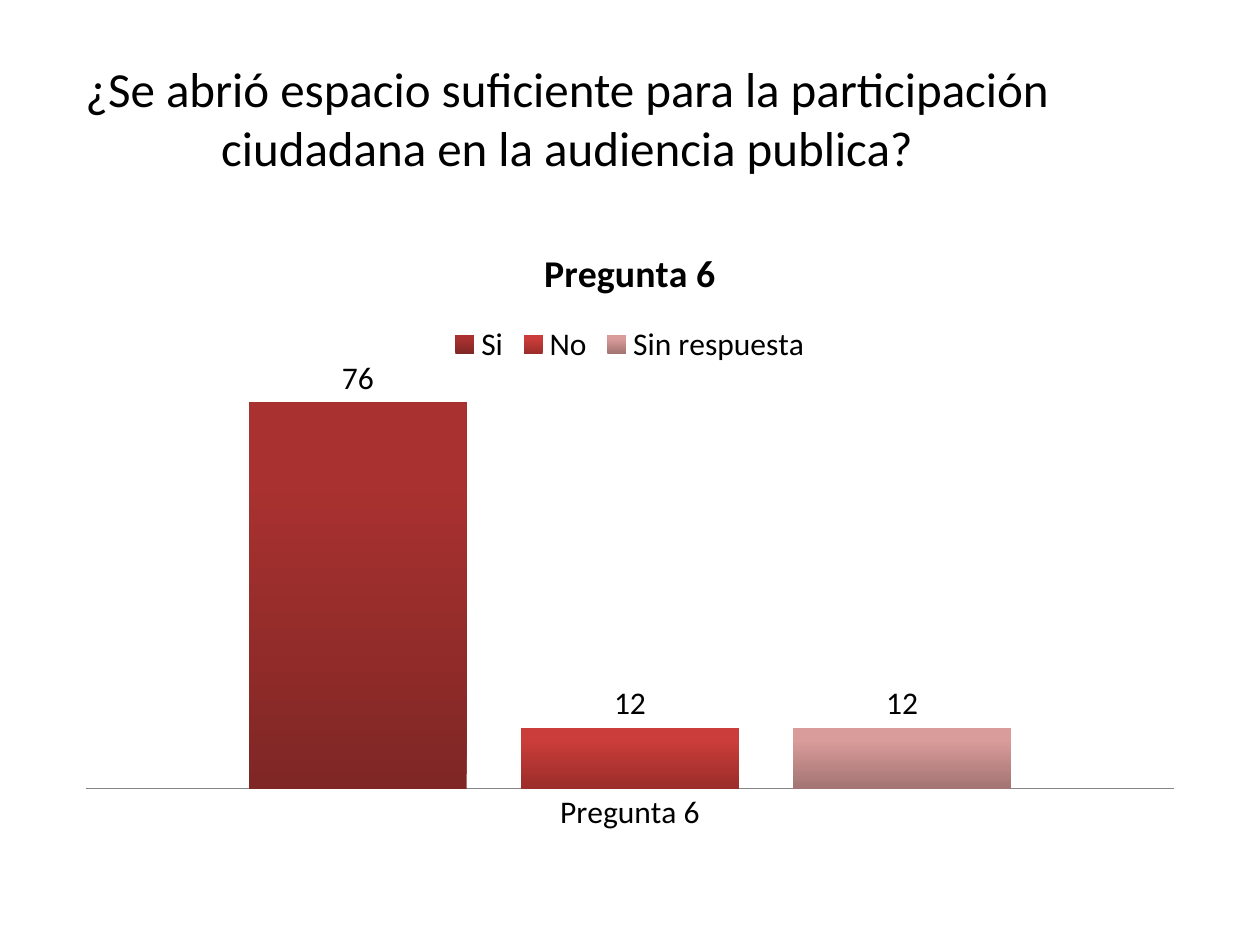
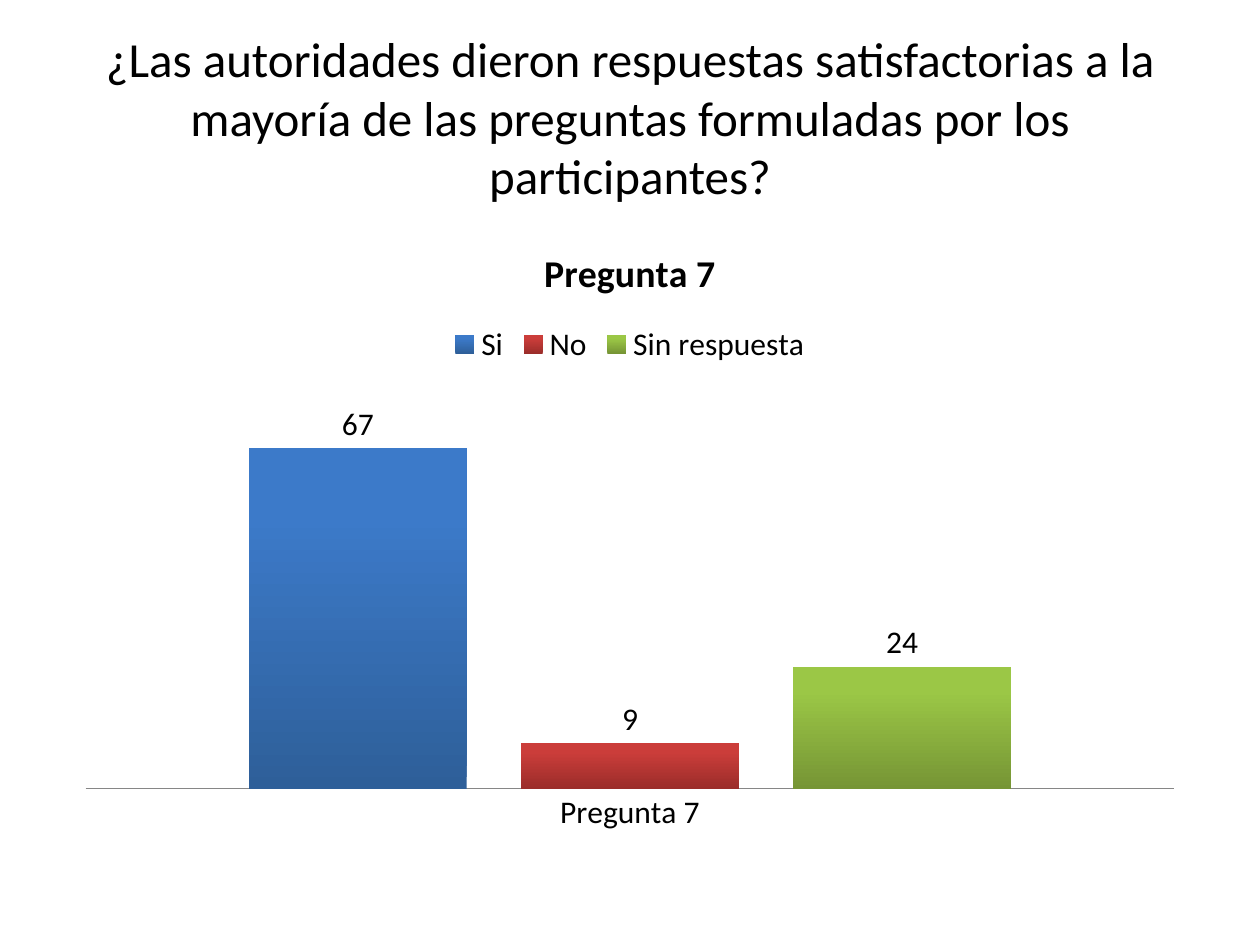
from pptx import Presentation
from pptx.chart.data import CategoryChartData
from pptx.dml.color import RGBColor
from pptx.enum.chart import (XL_CHART_TYPE, XL_LABEL_POSITION,
                             XL_LEGEND_POSITION, XL_TICK_MARK)
from pptx.enum.text import MSO_ANCHOR, PP_ALIGN
from pptx.util import Inches, Pt

FONT = "Calibri"
INK = "000000"
AXIS = "868686"
ANSWERS = ("Si", "No", "Sin respuesta")
TITLE_SIZE = (9, 1.25)
CHART_BOX = (0.5, 1.75, 9, 4.95)

# Each bar shades from its foot to its top.
RED = ("9B2D2A", "CB3D3A")
REDS = (("7F2725", "A93130"), RED, ("A37473", "D99C9B"))
MIXED = (("2E5F99", "3C7AC9"), RED, ("769535", "9BC746"))

POLLS = (
    ("¿Se abrió espacio suficiente para la participación ciudadana "
     "en la audiencia publica?", (0, 0.31), "Pregunta 6", (76, 12, 12), REDS),
    ("¿Las autoridades dieron respuestas satisfactorias a la mayoría de las "
     "preguntas formuladas por los participantes?",
     (0.5, 0.3), "Pregunta 7", (67, 9, 24), MIXED),
)


def color(code):
    return RGBColor.from_string(code)


def style(font, size, bold=False):
    font.name = FONT
    font.size = Pt(size)
    font.bold = bold
    font.color.rgb = color(INK)


def add_title(slide, text, box):
    title = slide.shapes.title
    title.left, title.top, title.width, title.height = map(Inches, box)
    frame = title.text_frame
    frame.text = text
    frame.word_wrap = True
    frame.vertical_anchor = MSO_ANCHOR.MIDDLE
    para = frame.paragraphs[0]
    para.alignment = PP_ALIGN.CENTER
    style(para.runs[0].font, 28)


def shade(fill, foot, top):
    fill.gradient()
    fill.gradient_angle = 90
    for stop, code, place in zip(fill.gradient_stops, (foot, top), (0, 0.8)):
        stop.color.rgb = color(code)
        stop.position = place


def add_bars(slide, name, votes, shades, box):
    data = CategoryChartData()
    data.categories = [name]
    for answer, vote in zip(ANSWERS, votes):
        data.add_series(answer, [vote])
    chart = slide.shapes.add_chart(
        XL_CHART_TYPE.COLUMN_CLUSTERED, *map(Inches, box), data).chart
    style(chart.font, 18)

    chart.has_title = True
    head = chart.chart_title.text_frame
    head.text = name
    style(head.paragraphs[0].runs[0].font, 21.6, True)
    chart.has_legend = True
    chart.legend.position = XL_LEGEND_POSITION.TOP
    chart.legend.include_in_layout = False

    chart.value_axis.visible = False
    chart.value_axis.has_major_gridlines = False
    chart.value_axis.minimum_scale = 0
    base = chart.category_axis
    base.major_tick_mark = XL_TICK_MARK.NONE
    base.format.line.color.rgb = color(AXIS)

    plot = chart.plots[0]
    plot.gap_width = 150
    plot.overlap = -25
    plot.vary_by_categories = False
    plot.has_data_labels = True
    plot.data_labels.show_value = True
    plot.data_labels.position = XL_LABEL_POSITION.OUTSIDE_END
    for series, (foot, top) in zip(plot.series, shades):
        shade(series.format.fill, foot, top)


def add_poll(deck, question, corner, name, votes, shades):
    slide = deck.slides.add_slide(deck.slide_layouts[5])
    add_title(slide, question, corner + TITLE_SIZE)
    add_bars(slide, name, votes, shades, CHART_BOX)


def main():
    deck = Presentation()
    deck.slide_width, deck.slide_height = Inches(10), Inches(7.5)
    for poll in POLLS:
        add_poll(deck, *poll)
    deck.save("out.pptx")


if __name__ == "__main__":
    main()
